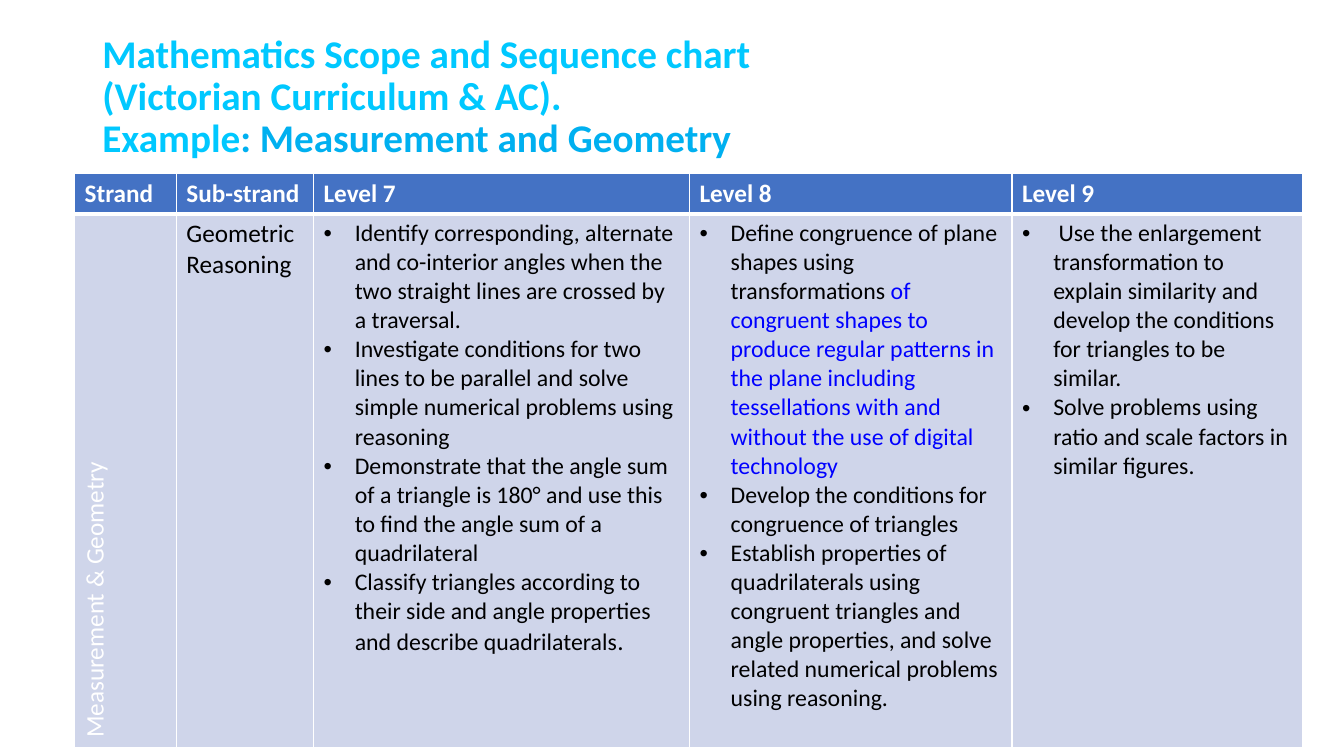
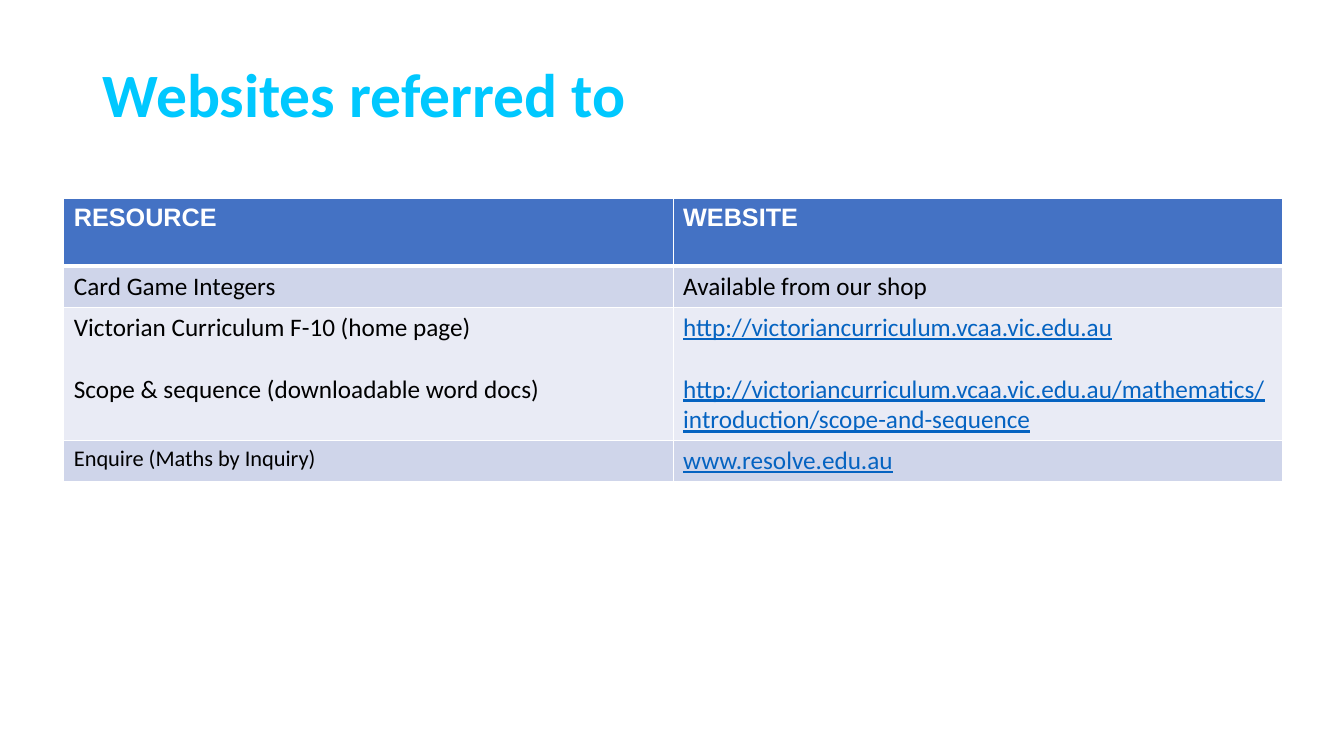
from dataclasses import dataclass, field

from lxml.etree import SubElement
from pptx import Presentation
from pptx.dml.color import RGBColor
from pptx.enum.text import MSO_ANCHOR
from pptx.oxml.ns import qn
from pptx.slide import Slide
from pptx.table import _Cell as Cell
from pptx.text.text import _Paragraph as Para
from pptx.util import Inches, Pt

SLIDE_W, SLIDE_H = Inches(13.333), Inches(7.5)
INDENT = Inches(0.31)

CYAN = RGBColor(0x00, 0xC8, 0xFF)
SKY = RGBColor(0x00, 0xB0, 0xF0)
HEAD_BLUE = RGBColor(0x44, 0x72, 0xC4)
BAND_DARK = RGBColor(0xCF, 0xD5, 0xEA)
BAND_LIGHT = RGBColor(0xE9, 0xEB, 0xF5)
LINK_BLUE = RGBColor(0x05, 0x63, 0xC1)
NEW_BLUE = RGBColor(0x00, 0x00, 0xFF)
WHITE = RGBColor(0xFF, 0xFF, 0xFF)
BLACK = RGBColor(0x00, 0x00, 0x00)

BODY = {"name": "Calibri", "size": 18, "bold": False, "color": BLACK}
HEAD = BODY | {"bold": True, "color": WHITE}
TITLE = BODY | {"bold": True, "color": CYAN}
POINT = BODY | {"size": 17}
LINK = BODY | {"color": LINK_BLUE, "underline": True}


@dataclass
class Span:
    text: str
    changes: dict = field(default_factory=dict)


@dataclass
class Entry:
    """Content of a table cell; each paragraph is a list of spans."""
    paras: list[list[Span]]
    style: dict = field(default_factory=lambda: BODY)
    bullet: bool = False
    gap: float = 0
    vertical: bool = False


@dataclass
class Grid:
    """A table: place and row heights in percent of the slide, column weights."""
    left: float
    top: float
    width: float
    columns: list[float]
    rows: list[float]
    entries: list[list[Entry]]


def across(percent: float) -> int:
    return int(SLIDE_W * percent / 100)


def down(percent: float) -> int:
    return int(SLIDE_H * percent / 100)


def entry(*texts: str, **options) -> Entry:
    return Entry([[Span(t)] for t in texts], **options)


def points(*paras: list[Span]) -> Entry:
    return Entry(list(paras), POINT, bullet=True)


def write_spans(p: Para, spans: list[Span], style: dict) -> None:
    for span in spans:
        for i, line in enumerate(span.text.split("\n")):
            if i:
                p.add_line_break()
            r = p.add_run()
            r.text = line
            for key, value in (style | span.changes).items():
                if key == "color":
                    r.font.color.rgb = value
                else:
                    setattr(r.font, key, Pt(value) if key == "size" else value)


def add_bullet(p: Para) -> None:
    pPr = p._p.get_or_add_pPr()
    pPr.set("marL", str(INDENT))
    pPr.set("indent", str(-INDENT))
    SubElement(pPr, qn("a:buFont"), typeface="Arial")
    SubElement(pPr, qn("a:buChar"), char="•")


def add_borders(cell: Cell, top: float, bottom: float) -> None:
    tcPr = cell._tc.get_or_add_tcPr()
    for side, width in {"L": 1, "R": 1, "T": top, "B": bottom}.items():
        ln = SubElement(tcPr, qn(f"a:ln{side}"), w=str(Pt(width)))
        SubElement(SubElement(ln, qn("a:solidFill")), qn("a:srgbClr"), val=str(WHITE))


def fill_cell(cell: Cell, item: Entry, row: int) -> None:
    add_borders(cell, top=3 if row == 1 else 1, bottom=3 if row == 0 else 1)
    cell.fill.solid()
    bands = (BAND_LIGHT, BAND_DARK)
    cell.fill.fore_color.rgb = bands[row % 2] if row else HEAD_BLUE
    if item.vertical:
        cell._tc.get_or_add_tcPr().set("vert", "vert270")
    tf = cell.text_frame
    for i, spans in enumerate(item.paras):
        p = tf.add_paragraph() if i else tf.paragraphs[0]
        if item.bullet:
            add_bullet(p)
        if i and item.gap:
            p.space_before = Pt(item.gap)
        write_spans(p, spans, item.style)


def add_title(s: Slide, spans: list[Span], size: float) -> None:
    tf = s.shapes.add_textbox(across(6.88), down(5.33), across(86.25), down(15.2)).text_frame
    tf.word_wrap = True
    tf.vertical_anchor = MSO_ANCHOR.MIDDLE
    p = tf.paragraphs[0]
    p.line_spacing = 0.9
    write_spans(p, spans, TITLE | {"size": size})


def add_grid(s: Slide, grid: Grid) -> None:
    width = across(grid.width)
    table = s.shapes.add_table(len(grid.rows), len(grid.columns), across(grid.left),
                               down(grid.top), width, down(sum(grid.rows))).table
    table.first_row = table.horz_banding = False
    for column, weight in zip(table.columns, grid.columns):
        column.width = int(width * weight / sum(grid.columns))
    for i, (row, height) in enumerate(zip(table.rows, grid.rows)):
        row.height = down(height)
        for cell, item in zip(row.cells, grid.entries[i]):
            fill_cell(cell, item, i)


SCOPE = Grid(
    5.55, 22.93, 91.35, [1.01, 1.36, 3.73, 3.2, 2.88], [5.33, 70.67],
    [
        [entry(t, style=HEAD) for t in ("Strand", "Sub-strand", "Level 7", "Level 8", "Level 9")],
        [
            entry("Measurement & Geometry", style=BODY | {"color": WHITE}, vertical=True),
            entry("Geometric", "Reasoning"),
            points(
                [Span("Identify corresponding, alternate and co-interior angles when the "
                      "two straight lines are crossed by a traversal.")],
                [Span("Investigate conditions for two lines to be parallel and solve "
                      "simple numerical problems using reasoning")],
                [Span("Demonstrate that the angle sum of a triangle is 180° and use this "
                      "to find the angle sum of a quadrilateral")],
                [Span("Classify triangles according to their side and angle properties "
                      "and describe quadrilaterals"), Span(".", {"size": 18})],
            ),
            points(
                [Span("Define congruence of plane shapes using transformations "),
                 Span("of congruent shapes to produce regular patterns in the plane "
                      "including tessellations with and without the use of digital "
                      "technology", {"color": NEW_BLUE})],
                [Span("Develop the conditions for congruence of triangles")],
                [Span("Establish properties of quadrilaterals using congruent triangles "
                      "and angle properties, and solve related numerical problems using "
                      "reasoning.")],
            ),
            points(
                [Span(" Use the enlargement transformation to explain similarity and "
                      "develop the conditions for triangles to be similar.")],
                [Span("Solve problems using ratio and scale factors in similar figures.")],
            ),
        ],
    ],
)

WEBSITES = Grid(
    4.75, 26.27, 90.67, [1, 1], [8.93, 5.47, 17.6, 5.47],
    [
        [entry(t, style=HEAD | {"name": "Arial"}) for t in ("RESOURCE", "WEBSITE")],
        [entry("Card Game Integers"), entry("Available from our shop")],
        [
            entry("Victorian Curriculum F-10 (home page)",
                  "Scope & sequence (downloadable word docs)", gap=22),
            entry("http://victoriancurriculum.vcaa.vic.edu.au",
                  "http://victoriancurriculum.vcaa.vic.edu.au/mathematics/"
                  "introduction/scope-and-sequence", style=LINK, gap=22),
        ],
        [entry("Enquire (Maths by Inquiry)", style=BODY | {"size": 16}),
         entry("www.resolve.edu.au", style=LINK)],
    ],
)

SCOPE_TITLE = [
    Span("Mathematics Scope and Sequence chart\n(Victorian Curriculum & AC).\nExample"),
    Span(": Measurement and Geometry", {"color": SKY}),
]


def main() -> None:
    prs = Presentation()
    prs.slide_width, prs.slide_height = SLIDE_W, SLIDE_H
    for title, size, grid in ((SCOPE_TITLE, 28, SCOPE),
                              ([Span("Websites referred to")], 44, WEBSITES)):
        s = prs.slides.add_slide(prs.slide_layouts[6])
        add_title(s, title, size)
        add_grid(s, grid)
    prs.save("out.pptx")


if __name__ == "__main__":
    main()
